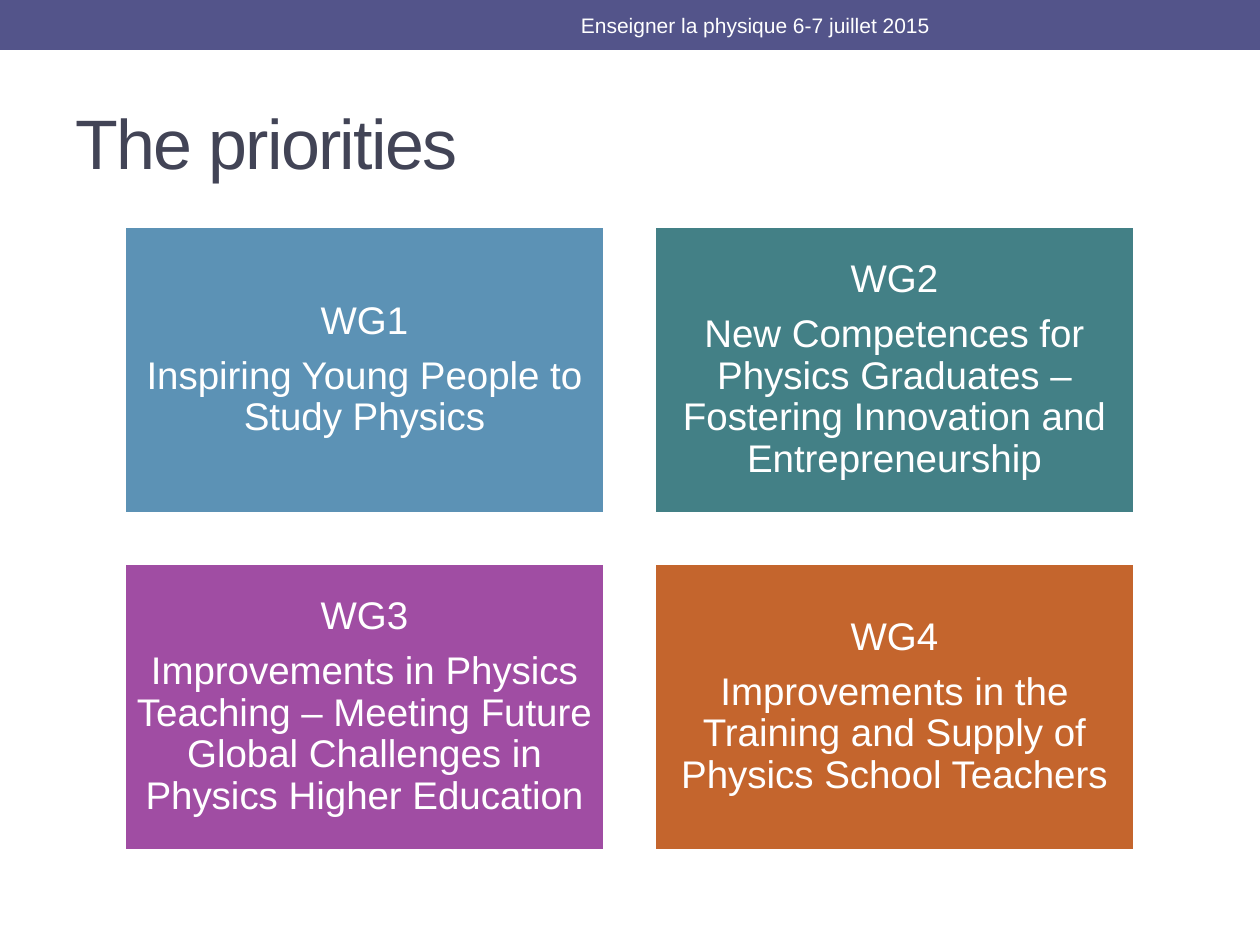
from pptx import Presentation
from pptx import util as u
from pptx.dml.color import RGBColor
from pptx.enum import shapes, text

PX = 914400 // 126
COLORS = {
    "bar": "53548A", "title": "424456", "white": "FFFFFF",
    "blue": "5C92B5", "teal": "438086", "purple": "A04DA3", "orange": "C4652D",
}
GROUPS = [
    ("WG1", "Inspiring Young People to Study Physics", "blue"),
    ("WG2", "New Competences for Physics Graduates – Fostering Innovation "
            "and Entrepreneurship", "teal"),
    ("WG3", "Improvements in Physics Teaching – Meeting Future Global "
            "Challenges in Physics Higher Education", "purple"),
    ("WG4", "Improvements in the Training and Supply of Physics School "
            "Teachers", "orange"),
]
LEFT, TOP, CARD_WIDTH, CARD_HEIGHT = 124, 226, 481, 288
COLUMN_STEP, ROW_STEP = 530, 337


class SlideBuilder:
    font = "Arial"

    def __init__(self, deck):
        self.slide = deck.slides.add_slide(deck.slide_layouts[5])

    def color(self, name):
        return RGBColor.from_string(COLORS[name])

    def set_text(self, box, lines, size, color, align):
        """Fill a shape with one paragraph per line, centred vertically."""
        frame = box.text_frame
        frame.text = "\n".join(lines)
        frame.word_wrap = True
        frame.auto_size = text.MSO_AUTO_SIZE.NONE
        frame.vertical_anchor = text.MSO_ANCHOR.MIDDLE
        for para in frame.paragraphs:
            para.alignment = align
            for span in para.runs:
                span.font.name = self.font
                span.font.size = u.Pt(size)
                span.font.color.rgb = self.color(color)
        return frame

    def rectangle(self, left, top, width, height, fill):
        box = self.slide.shapes.add_shape(
            shapes.MSO_SHAPE.RECTANGLE,
            left * PX, top * PX, width * PX, height * PX)
        box.shadow.inherit = False
        box.fill.solid()
        box.fill.fore_color.rgb = self.color(fill)
        box.line.fill.background()
        return box

    def title(self, left, top, width, height, words):
        box = self.slide.shapes.title
        box.left, box.top = left * PX, top * PX
        box.width, box.height = width * PX, height * PX
        frame = self.set_text(box, [words], 40, "title", text.PP_ALIGN.LEFT)
        for span in frame.paragraphs[0].runs:
            span.font._element.set("spc", "-100")

    def card(self, left, top, name, topic, fill):
        box = self.rectangle(left, top, CARD_WIDTH, CARD_HEIGHT, fill)
        box.line.color.rgb = self.color("white")
        box.line.width = u.Pt(2)
        frame = self.set_text(box, [name, topic], 22, "white",
                              text.PP_ALIGN.CENTER)
        frame.margin_left = frame.margin_right = u.Inches(0.09)
        frame.margin_top = frame.margin_bottom = u.Inches(0.09)
        for para in frame.paragraphs:
            para.line_spacing = 0.9
            para.space_after = u.Pt(7.7)

    def label(self, left, top, width, height, words):
        box = self.slide.shapes.add_textbox(
            left * PX, top * PX, width * PX, height * PX)
        self.set_text(box, [words], 12, "white", text.PP_ALIGN.CENTER)


def main():
    deck = Presentation()
    deck.slide_width, deck.slide_height = u.Inches(10), u.Inches(7.5)
    page = SlideBuilder(deck)
    page.rectangle(0, 0, 1260, 50, "bar")
    page.title(63, 73, 1134, 136, "The priorities")
    for index, (name, topic, fill) in enumerate(GROUPS):
        row, column = divmod(index, 2)
        page.card(LEFT + column * COLUMN_STEP, TOP + row * ROW_STEP,
                  name, topic, fill)
    page.label(472, 3, 567, 45, "Enseigner la physique 6-7 juillet 2015")
    deck.save("out.pptx")


if __name__ == "__main__":
    main()
